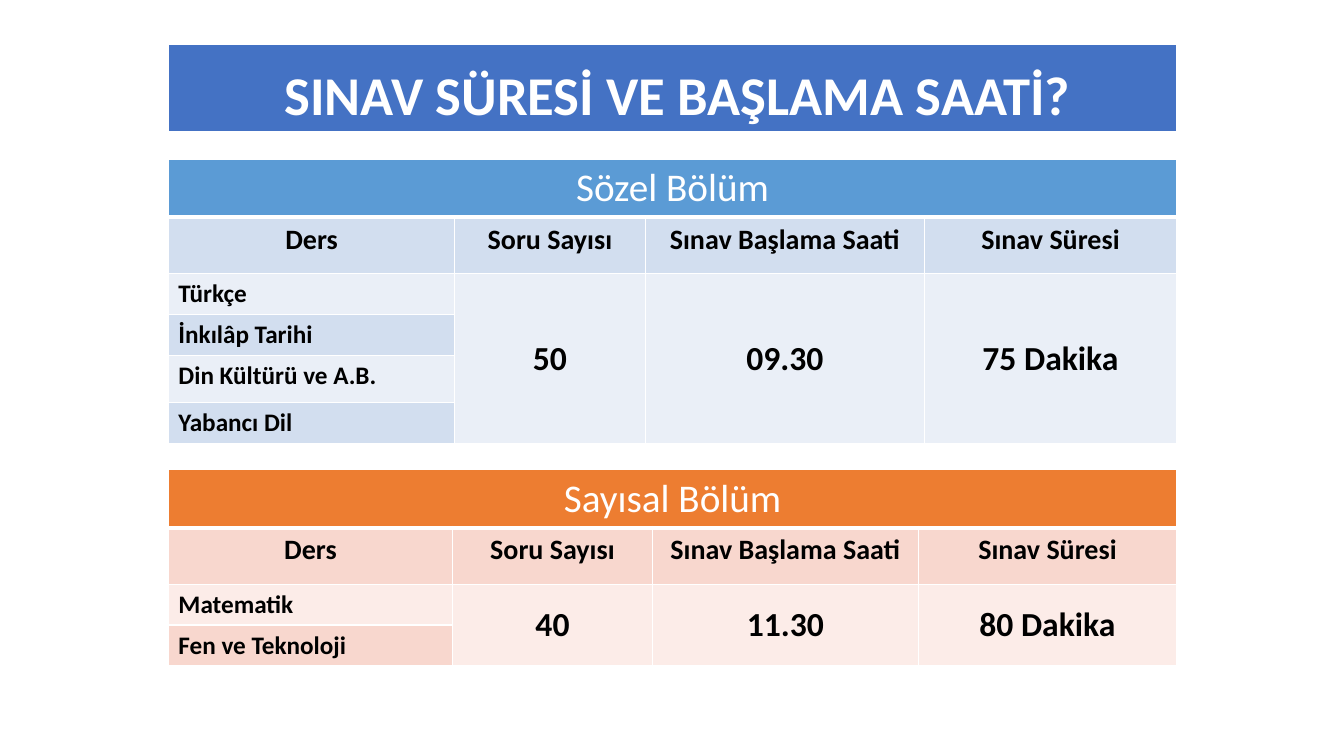
from lxml import etree
from pptx import Presentation
from pptx import util as u
from pptx.dml.color import RGBColor
from pptx.enum import text
from pptx.oxml.ns import qn

LEFT, WIDTH = u.Inches(1.67), u.Inches(10)
HEADINGS = ["Ders", "Soru Sayısı", "Sınav Başlama Saati", "Sınav Süresi"]
WHITE, BLACK = "FFFFFF", "000000"


def paint(fill, color):
    fill.solid()
    fill.fore_color.rgb = RGBColor.from_string(color)


def style_paragraph(paragraph, size, color, bold, alignment):
    paragraph.alignment = alignment
    font = paragraph.font
    font.name, font.size, font.bold = "Calibri", u.Pt(size), bold
    paint(font.fill, color)


def add_title(slide, wording):
    title = slide.shapes.title
    title.left, title.top = LEFT, u.Inches(0.44)
    title.width, title.height = WIDTH, u.Inches(0.87)
    paint(title.fill, "4472C4")
    paint(title.line.fill, WHITE)
    title.line.width = u.Pt(1.5)
    frame = title.text_frame
    frame.text = wording
    frame.auto_size = text.MSO_AUTO_SIZE.NONE
    frame.vertical_anchor = text.MSO_ANCHOR.BOTTOM
    frame.margin_left = u.Inches(0.2)
    paragraph = frame.paragraphs[0]
    paragraph.line_spacing = 0.9
    style_paragraph(paragraph, 39, WHITE, True, text.PP_ALIGN.CENTER)


def set_borders(cell, bottom):
    properties = cell._tc.get_or_add_tcPr()
    widths = {"a:lnL": 1, "a:lnR": 1, "a:lnT": 1, "a:lnB": bottom}
    for position, (side, points) in enumerate(widths.items()):
        line = etree.Element(qn(side), w=str(u.Pt(points)))
        solid = etree.SubElement(line, qn("a:solidFill"))
        etree.SubElement(solid, qn("a:srgbClr"), val=WHITE)
        properties.insert(position, line)


def write_cell(cell, wording, size, color=BLACK, bold=True, alignment=text.PP_ALIGN.CENTER):
    cell.text = wording
    style_paragraph(cell.text_frame.paragraphs[0], size, color, bold, alignment)


def add_section(slide, top, columns, rows, name, lessons, facts, colors):
    header, dark, light = colors
    frame = slide.shapes.add_table(len(rows), len(columns), LEFT, u.Inches(top),
                                   WIDTH, u.Inches(sum(rows)))
    table = frame.table
    table.first_row = table.horz_banding = False
    for column, width in zip(table.columns, columns):
        column.width = u.Inches(width)
    for row, height in zip(table.rows, rows):
        row.height = u.Inches(height)

    last = len(rows) - 1
    for row in range(len(rows)):
        for column in range(len(columns)):
            cell = table.cell(row, column)
            is_light = row > 1 and (column > 0 or row % 2 == 0)
            paint(cell.fill, header if row == 0 else light if is_light else dark)
            set_borders(cell, 3 if row == 0 else 1)

    table.cell(0, 0).merge(table.cell(0, 3))
    write_cell(table.cell(0, 0), name, 28, WHITE, False)
    for column, heading in enumerate(HEADINGS):
        write_cell(table.cell(1, column), heading, 20)
    for row, lesson in enumerate(lessons, 2):
        write_cell(table.cell(row, 0), lesson, 18, alignment=text.PP_ALIGN.LEFT)
    for column, fact in enumerate(facts, 1):
        cell = table.cell(2, column)
        cell.merge(table.cell(last, column))
        cell.vertical_anchor = text.MSO_ANCHOR.MIDDLE
        write_cell(cell, fact, 24)


def main():
    presentation = Presentation()
    presentation.slide_width = u.Inches(13.33)
    presentation.slide_height = u.Inches(7.5)
    slide = presentation.slides.add_slide(presentation.slide_layouts[5])
    add_title(slide, "SINAV SÜRESİ VE BAŞLAMA SAATİ?")
    add_section(slide, 1.58, [2.84, 1.89, 2.77, 2.5], [0.57, 0.56, 0.4, 0.4, 0.47, 0.4],
                "Sözel Bölüm",
                ["Türkçe", "İnkılâp Tarihi", "Din Kültürü ve A.B.", "Yabancı Dil"],
                ["50", "09.30", "75 Dakika"], ["5B9BD5", "D2DEEF", "EAEFF7"])
    add_section(slide, 4.66, [2.82, 1.98, 2.64, 2.56], [0.57, 0.56, 0.4, 0.4],
                "Sayısal Bölüm", ["Matematik", "Fen ve Teknoloji"],
                ["40", "11.30", "80 Dakika"], ["ED7D31", "F8D7CE", "FCECE8"])
    presentation.save("out.pptx")


if __name__ == "__main__":
    main()
